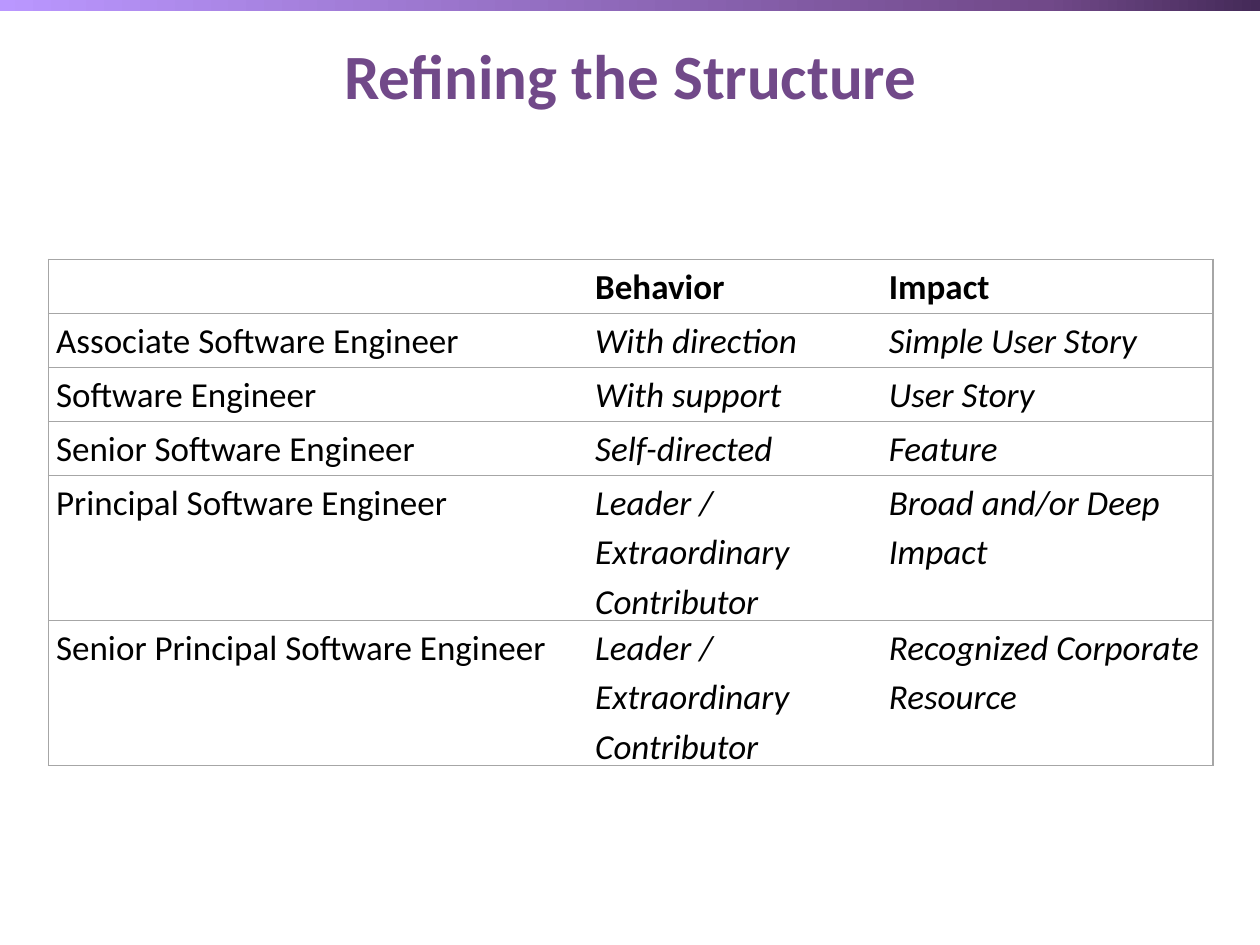
from copy import deepcopy
from dataclasses import dataclass

from lxml.etree import SubElement
from pptx import Presentation
from pptx.dml.color import RGBColor
from pptx.enum.shapes import MSO_SHAPE
from pptx.enum.text import MSO_ANCHOR, PP_ALIGN
from pptx.oxml.ns import qn
from pptx.slide import Slide
from pptx.table import _Cell as Cell
from pptx.text.text import _Paragraph as Paragraph
from pptx.util import Cm, Pt

PURPLE = RGBColor(0x71, 0x49, 0x89)
DARK_PURPLE = RGBColor(0x44, 0x2A, 0x58)
LILAC = RGBColor(0xBA, 0x97, 0xFF)
BLACK = RGBColor(0x00, 0x00, 0x00)
GREY = RGBColor(0xA6, 0xA6, 0xA6)
FONT = "Calibri"
BAR_STOPS = ((0, DARK_PURPLE), (0.17, PURPLE), (1, LILAC))
COLUMN_WIDTHS = (Cm(10.87), Cm(5.92), Cm(6.68))
ROW_HEIGHT = Cm(1.09)


@dataclass(frozen=True)
class Level:
    role: str
    behavior: str
    impact: str


HEADER = Level("", "Behavior", "Impact")
LEVELS = (
    Level("Associate Software Engineer", "With direction", "Simple User Story"),
    Level("Software Engineer", "With support", "User Story"),
    Level("Senior Software Engineer", "Self-directed", "Feature"),
    Level("Principal Software Engineer", "Leader / Extraordinary Contributor",
          "Broad and/or Deep Impact"),
    Level("Senior Principal Software Engineer", "Leader / Extraordinary Contributor",
          "Recognized Corporate Resource"),
)


def set_font(paragraph: Paragraph, size: int, color: RGBColor,
             bold: bool = False, italic: bool = False) -> None:
    font = paragraph.font
    font.name, font.size = FONT, Pt(size)
    font.bold, font.italic = bold, italic
    font.color.rgb = color


def add_top_bar(slide: Slide) -> None:
    bar = slide.shapes.add_shape(MSO_SHAPE.RECTANGLE, Cm(-0.05), Cm(-0.05), Cm(25.45), Cm(0.28))
    bar.shadow.inherit = False
    bar.line.fill.background()
    bar.fill.gradient()
    bar.fill.gradient_angle = 180
    first_stop = bar.fill._fill._gradFill.gsLst[0]
    first_stop.addnext(deepcopy(first_stop))
    for stop, (position, color) in zip(bar.fill.gradient_stops, BAR_STOPS):
        stop.position = position
        stop.color.rgb = color


def add_title(slide: Slide, text: str) -> None:
    box = slide.shapes.add_textbox(Cm(0.71), Cm(0.2), Cm(24), Cm(2.59))
    frame = box.text_frame
    frame.word_wrap = True
    frame.vertical_anchor = MSO_ANCHOR.MIDDLE
    paragraph = frame.paragraphs[0]
    paragraph.text = text
    paragraph.alignment = PP_ALIGN.CENTER
    set_font(paragraph, 36, PURPLE, bold=True)


def set_borders(cell: Cell, visible: str) -> None:
    """Draw the sides named in visible (L, R, T, B) and clear the others."""
    properties = cell._tc.get_or_add_tcPr()
    for side in "LRTB":
        line = SubElement(properties, qn(f"a:ln{side}"), w=str(Pt(1)))
        if side in visible:
            fill = SubElement(line, qn("a:solidFill"))
            SubElement(fill, qn("a:srgbClr"), val=str(GREY))
        else:
            SubElement(line, qn("a:noFill"))


def fill_cell(cell: Cell, text: str, borders: str, bold: bool, italic: bool) -> None:
    cell.margin_left = cell.margin_right = Cm(0.15)
    cell.margin_top = cell.margin_bottom = 0
    set_borders(cell, borders)
    cell.fill.background()
    paragraph = cell.text_frame.paragraphs[0]
    if text:
        paragraph.text = text
    paragraph.line_spacing = 1.15
    set_font(paragraph, 20, BLACK, bold, italic)


def add_level_table(slide: Slide) -> None:
    rows = (HEADER, *LEVELS)
    height = Cm(10.21)
    shape = slide.shapes.add_table(len(rows), len(COLUMN_WIDTHS), Cm(0.98), Cm(5.23),
                                   sum(COLUMN_WIDTHS), height)
    table = shape.table
    table.first_row = table.horz_banding = False
    for column, width in zip(table.columns, COLUMN_WIDTHS):
        column.width = width
    for row, level in zip(table.rows, rows):
        row.height = ROW_HEIGHT
        is_header = level is HEADER
        texts = (level.role, level.behavior, level.impact)
        for index, (text, borders) in enumerate(zip(texts, ("LTB", "TB", "RTB"))):
            fill_cell(row.cells[index], text, borders,
                      bold=is_header, italic=index > 0 and not is_header)
    shape.height = height


def main() -> None:
    presentation = Presentation()
    presentation.slide_width, presentation.slide_height = Cm(25.4), Cm(19.05)
    slide = presentation.slides.add_slide(presentation.slide_layouts[6])
    add_top_bar(slide)
    add_title(slide, "Refining the Structure")
    add_level_table(slide)
    presentation.save("out.pptx")


if __name__ == "__main__":
    main()
